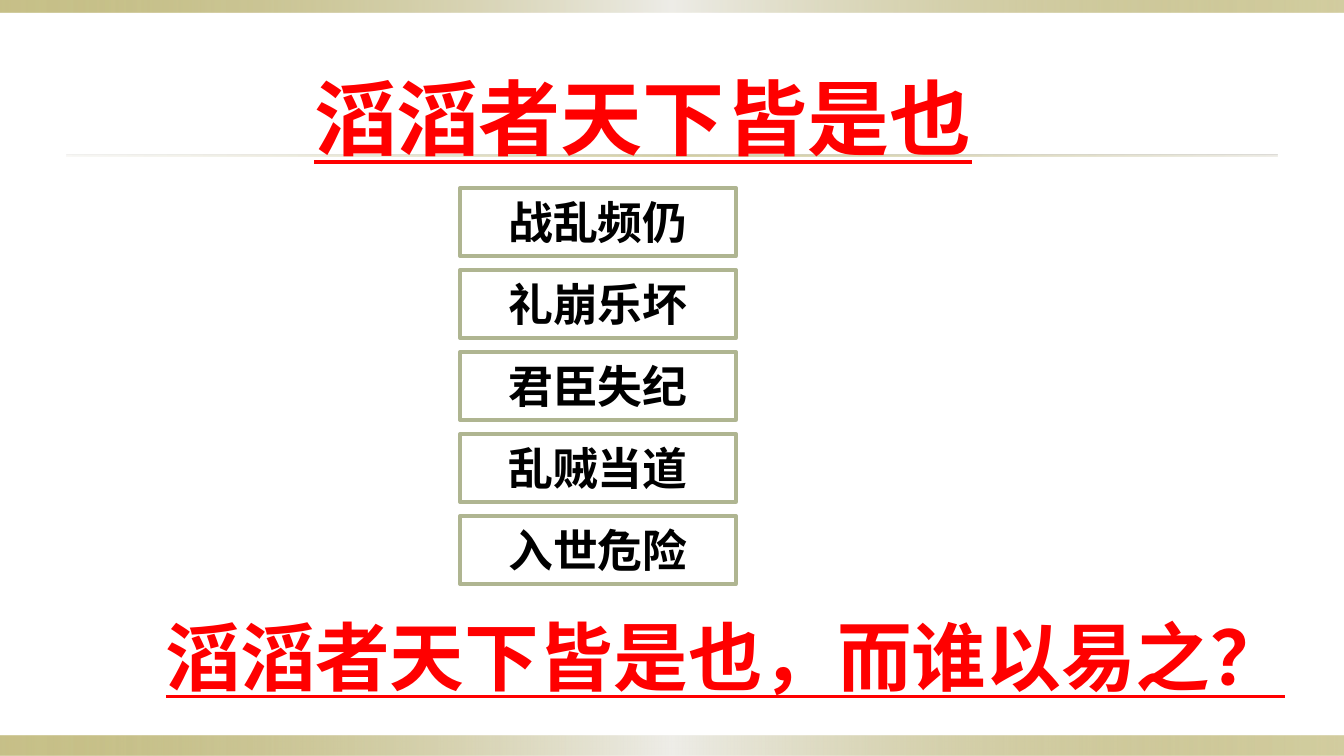
from lxml.etree import SubElement
from pptx import Presentation
from pptx.dml.color import RGBColor
from pptx.enum.shapes import MSO_SHAPE
from pptx.enum.text import MSO_ANCHOR as Anchor, MSO_AUTO_SIZE as AutoSize, PP_ALIGN as Align
from pptx.oxml.ns import qn
from pptx.util import Pt

PX = 914400 / 134.4
WIDTH, HEIGHT = 1344, 756

RED = RGBColor(0xFF, 0x00, 0x00)
BLACK = RGBColor(0x00, 0x00, 0x00)
WHITE = RGBColor(0xFF, 0xFF, 0xFF)
SAGE = RGBColor(0xAF, 0xB5, 0x91)
OLIVE = RGBColor(0x91, 0x84, 0x15)
PALE = RGBColor(0xEE, 0xED, 0xE8)
SAND = RGBColor(0xDC, 0xD9, 0xCC)

CHINESE = "Noto Sans CJK SC"
LATIN = "Lato"

# Gradient stops: position %, colour, opacity %
BAND_STOPS = [(0, OLIVE, 50), (50, PALE, 100), (100, OLIVE, 40)]
RULE_STOPS = [(0, SAND, 20), (50, OLIVE, 40), (100, SAND, 50)]

CAUSES = ["战乱频仍", "礼崩乐坏", "君臣失纪", "乱贼当道", "入世危险"]


def emu(*lengths):
    return [round(length * PX) for length in lengths]


def add_rectangle(page, box):
    shape = page.shapes.add_shape(MSO_SHAPE.RECTANGLE, *emu(*box))
    shape.shadow.inherit = False
    return shape


def add_gradient_bar(page, box, stops):
    bar = add_rectangle(page, box)
    bar.line.fill.background()
    bar.fill.gradient()
    bar.fill.gradient_angle = 0
    stop_list = bar._element.spPr.find(qn("a:gradFill")).find(qn("a:gsLst"))
    for old_stop in list(stop_list):
        stop_list.remove(old_stop)
    for position, color, opacity in stops:
        stop = SubElement(stop_list, qn("a:gs"), pos=str(position * 1000))
        tone = SubElement(stop, qn("a:srgbClr"), val=str(color))
        if opacity < 100:
            SubElement(tone, qn("a:alpha"), val=str(opacity * 1000))


def write_text(shape, text, size, font, color, align, underline=False):
    para = shape.text_frame.paragraphs[0]
    para.alignment = align
    span = para.add_run()
    span.text = text
    span.font.size = Pt(size)
    span.font.name = font
    span.font.bold = True
    span.font.underline = underline
    span.font.color.rgb = color
    SubElement(span.font._element, qn("a:ea"), typeface=CHINESE)


def write_headline(shape, text, size, align):
    frame = shape.text_frame
    frame.word_wrap = False
    frame.auto_size = AutoSize.SHAPE_TO_FIT_TEXT
    frame.vertical_anchor = Anchor.TOP
    write_text(shape, text, size, CHINESE, RED, align, underline=True)


def add_background(page, box):
    left, top, width, height = box
    add_gradient_bar(page, (left, top + height - 20, width, 20), BAND_STOPS)
    add_gradient_bar(page, (left, top, width, 12), BAND_STOPS)
    add_gradient_bar(page, (left + 67, top + 155, width - 134, 2), RULE_STOPS)


def add_title(page, box):
    title = page.shapes.title
    title.left, title.top, title.width, title.height = emu(*box)
    write_headline(title, "滔滔者天下皆是也", 44, Align.LEFT)
    # Bring the title in front of the background
    page.shapes._spTree.append(title._element)


def add_causes(page, box):
    left, top, width, height = box
    row_height = 68
    step = (height - row_height) / (len(CAUSES) - 1)
    for row, cause in enumerate(CAUSES):
        card = add_rectangle(page, (left, top + row * step, width, row_height))
        card.fill.solid()
        card.fill.fore_color.rgb = WHITE
        card.line.color.rgb = SAGE
        card.line.width = Pt(2)
        card.text_frame.word_wrap = True
        card.text_frame.auto_size = AutoSize.SHAPE_TO_FIT_TEXT
        write_text(card, cause, 24, LATIN, BLACK, Align.CENTER)


def add_question(page, box):
    question = page.shapes.add_textbox(*emu(*box))
    write_headline(question, "滔滔者天下皆是也，而谁以易之？", 40, Align.CENTER)


def main():
    deck = Presentation()
    deck.slide_width, deck.slide_height = emu(WIDTH, HEIGHT)
    page = deck.slides.add_slide(deck.slide_layouts[5])
    add_background(page, (0, 0, WIDTH, HEIGHT))
    add_title(page, (301, 61, 692, 113))
    add_causes(page, (460, 188, 276, 396))
    add_question(page, (145, 604, 1161, 104))
    deck.save("out.pptx")


if __name__ == "__main__":
    main()
